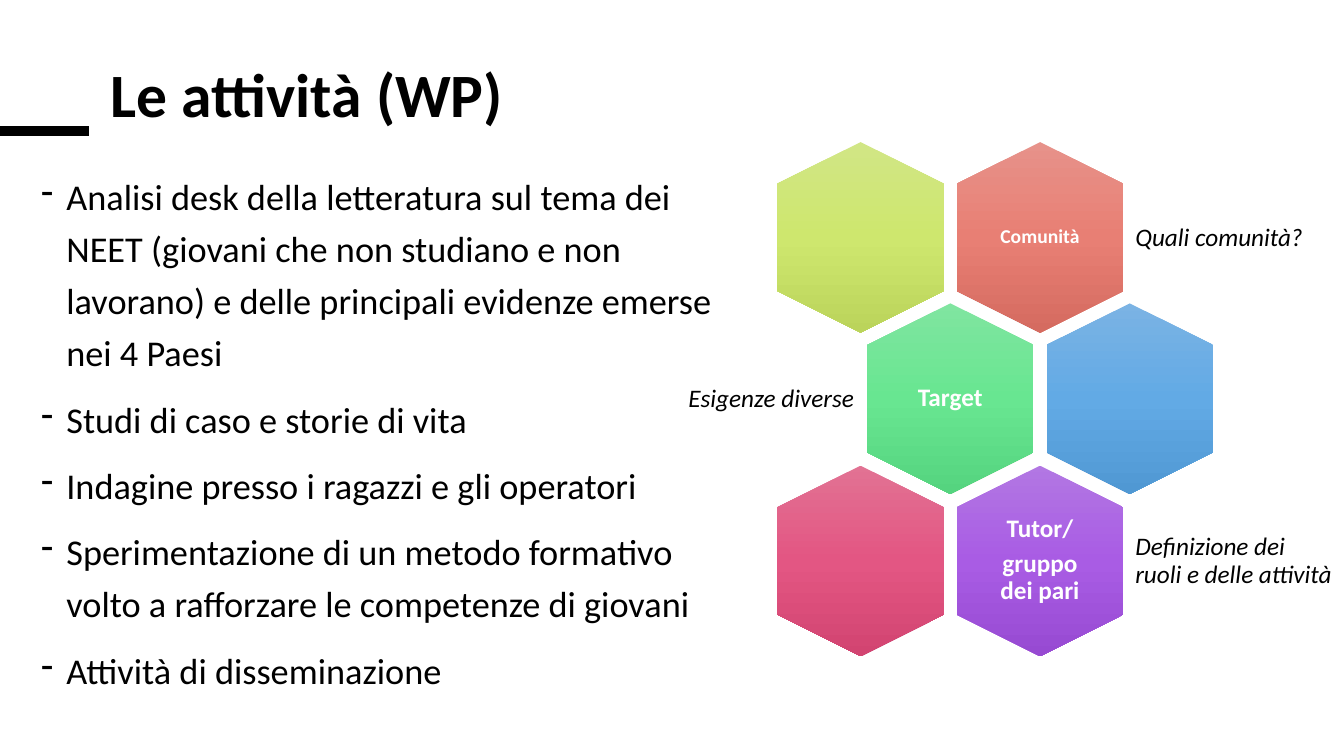
from lxml import etree
from pptx import Presentation
from pptx.dml.color import RGBColor
from pptx.enum.shapes import MSO_CONNECTOR, MSO_SHAPE
from pptx.enum.text import MSO_ANCHOR, MSO_AUTO_SIZE, PP_ALIGN
from pptx.oxml import parse_xml
from pptx.oxml.ns import nsdecls, qn
from pptx.util import Pt

TITLE = "Le attività (WP)"
TASKS = [
    "Analisi desk della letteratura sul tema dei NEET (giovani che non studiano "
    "e non lavorano) e delle principali evidenze emerse nei 4 Paesi",
    "Studi di caso e storie di vita",
    "Indagine presso i ragazzi e gli operatori",
    "Sperimentazione di un metodo formativo volto a rafforzare le competenze di giovani",
    "Attività di disseminazione",
]
CELLS = [
    (0, 0, ("D1E685", "CEE76E", "BBD45B")),
    (0, 1, ("E7928A", "E87F74", "D56B60")),
    (1, 0, ("80E5A0", "68E691", "55D47F")),
    (1, 1, ("7BB3E4", "62AAE5", "5098D3")),
    (2, 0, ("E27293", "E35683", "D24471")),
    (2, 1, ("B277E3", "A95CE4", "974AD2")),
]
LABELS = [
    (0, 1, ["Comunità"], 14),
    (1, 0, ["Target"], 18),
    (2, 1, ["Tutor/", "gruppo dei pari"], 18),
]
RIGHT, LEFT, CENTER = PP_ALIGN.RIGHT, PP_ALIGN.LEFT, PP_ALIGN.CENTER
TOP, MIDDLE = MSO_ANCHOR.TOP, MSO_ANCHOR.MIDDLE
NOTES = [
    (0, 1, "Quali comunità?", LEFT),
    (1, 0, "Esigenze diverse", RIGHT),
    (2, 1, "Definizione dei ruoli e delle attività", LEFT),
]

PX = 9144
BLACK = RGBColor(0, 0, 0)
WHITE = RGBColor(255, 255, 255)
FONT = "Calibri"
HEX_W, HEX_H = 189, 165
GRID_X, GRID_Y, STEP_X, TWO_ROWS = 759, 153, 178, 321


def px(*vals):
    return [val * PX for val in vals]


def spot(row, col):
    return GRID_X + col * STEP_X + row % 2 * STEP_X // 2, GRID_Y + row * TWO_ROWS // 2


def style(para, size, color, bold=False, italic=False):
    for run in para.runs:
        font = run.font
        font.name, font.size, font.bold, font.italic = FONT, Pt(size), bold, italic
        font.color.rgb = color


def add_text(box, lines, size, align, color, inset=7, **look):
    frame = slide.shapes.add_textbox(*px(*box)).text_frame
    frame.word_wrap = True
    frame.vertical_anchor = MIDDLE
    frame.margin_left = frame.margin_right = inset * PX
    frame.margin_top = frame.margin_bottom = inset * PX
    frame.text = "\n".join(lines)
    for para in frame.paragraphs:
        para.alignment = align
        para.line_spacing = 0.9
        para.space_after = Pt(6)
        style(para, size, color, **look)
    frame.paragraphs[-1].space_after = Pt(0)


def shade(shape, colors):
    stops = "".join(
        f'<a:gs pos="{i * 50000}"><a:srgbClr val="{color}"/></a:gs>'
        for i, color in enumerate(colors))
    grad = parse_xml(
        f'<a:gradFill {nsdecls("a")} rotWithShape="0"><a:gsLst>{stops}</a:gsLst>'
        '<a:lin ang="5400000" scaled="0"/></a:gradFill>')
    shape._element.spPr.find(qn("a:prstGeom")).addnext(grad)


deck = Presentation()
deck.slide_width, deck.slide_height = px(1333, 750)
slide = deck.slides.add_slide(deck.slide_layouts[5])

rule = slide.shapes.add_connector(MSO_CONNECTOR.STRAIGHT, *px(0, 130, 88, 130))
rule.line.color.rgb = BLACK
rule.line.width = Pt(6.75)
etree.SubElement(rule._element.spPr, qn("a:effectLst"))

title = slide.shapes.title
title.left, title.top, title.width, title.height = px(100, 62, 1085, 142)
frame = title.text_frame
frame.text = TITLE
frame.auto_size = MSO_AUTO_SIZE.NONE
frame.vertical_anchor = TOP
head = frame.paragraphs[0]
head.alignment = LEFT
head.line_spacing = 0.85
style(head, 44, BLACK, bold=True)

frame = slide.shapes.add_textbox(*px(31, 159, 711, 548)).text_frame
frame.word_wrap = True
frame.text = "\n".join(TASKS)
for i, para in enumerate(frame.paragraphs):
    props = para._p.get_or_add_pPr()
    props.set("marL", str(25 * PX))
    props.set("indent", str(-25 * PX))
    etree.SubElement(props, qn("a:buChar"), char="-")
    para.line_spacing = 1.2
    para.space_before = Pt(10 if i else 0)
    style(para, 25.9, BLACK)

for row, col, colors in CELLS:
    x, y = spot(row, col)
    cell = slide.shapes.add_shape(MSO_SHAPE.HEXAGON, *px(x, y, HEX_W, HEX_H))
    cell.rotation = 90
    cell.adjustments[0] = 0.25
    cell.adjustments[1] = 1.1547
    cell.shadow.inherit = False
    cell.line.fill.background()
    shade(cell, colors)

for row, col, lines, size in LABELS:
    x, y = spot(row, col)
    add_text((x + 38, y + 17, 113, 130), lines, size, CENTER, WHITE, bold=True)

for row, col, note, align in NOTES:
    x, y = spot(row, col)
    shift, wide = (182, 211) if align == LEFT else (-199, 205)
    add_text((x + shift, y + 26, wide, 114), [note], 18, align, BLACK, italic=True)

deck.save("out.pptx")
